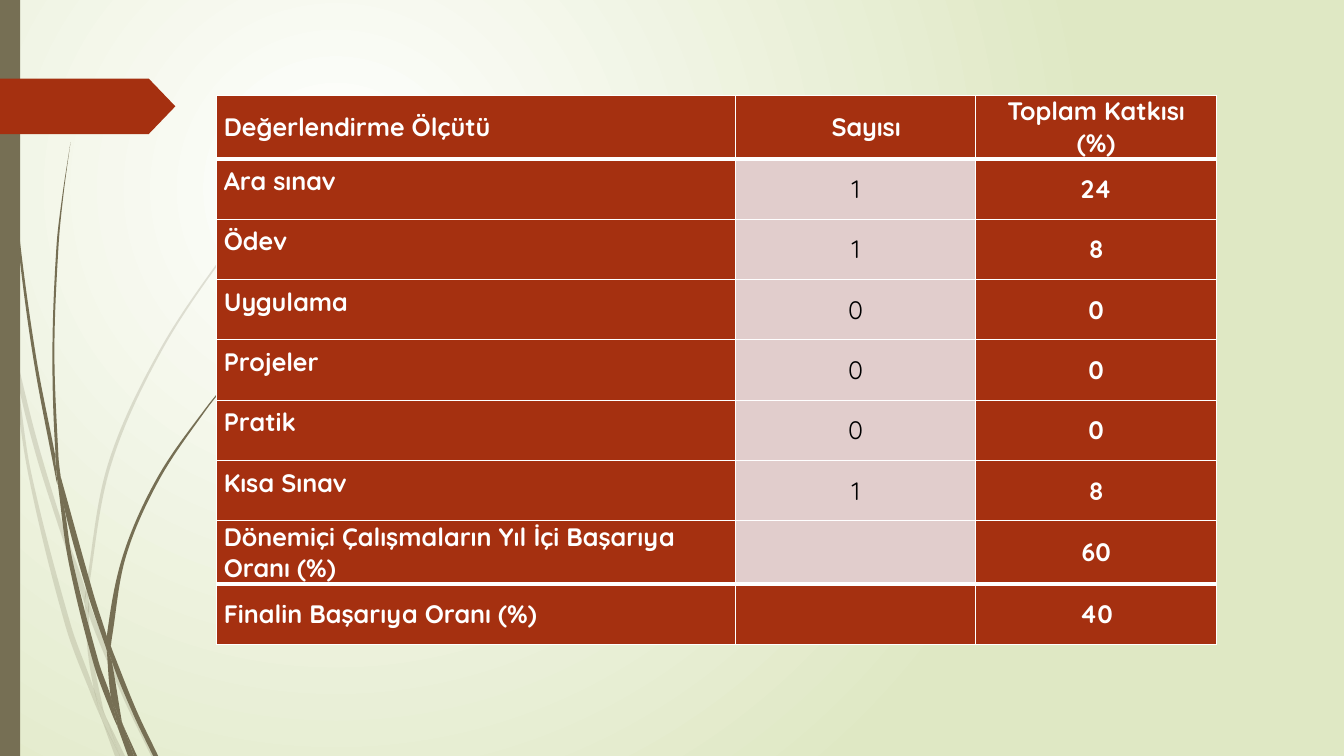
from dataclasses import dataclass
from math import hypot

from lxml import etree
from pptx import Presentation
from pptx.dml.color import RGBColor
from pptx.enum.shapes import MSO_SHAPE
from pptx.enum.text import MSO_ANCHOR, PP_ALIGN
from pptx.oxml import parse_xml
from pptx.oxml.ns import qn
from pptx.util import Cm, Pt

RECT, ARROW = MSO_SHAPE.RECTANGLE, MSO_SHAPE.PENTAGON
MIDDLE, LEFT, CENTER = MSO_ANCHOR.MIDDLE, PP_ALIGN.LEFT, PP_ALIGN.CENTER
SPACE = "http://schemas.openxmlformats.org/drawingml/2006/main"

ROWS = [
    ("Değerlendirme Ölçütü", "Sayısı", "Toplam Katkısı (%)"),
    ("Ara sınav", "1", "24"),
    ("Ödev", "1", "8"),
    ("Uygulama", "0", "0"),
    ("Projeler", "0", "0"),
    ("Pratik", "0", "0"),
    ("Kısa Sınav", "1", "8"),
    ("Dönemiçi Çalışmaların Yıl İçi Başarıya Oranı (%)", "", "60"),
    ("Finalin Başarıya Oranı (%)", "", "40"),
]
WIDTHS = (13.08, 6.05, 6.07)
HEAD_INDENTS = ((0.18, 0), (0.53, 0), (0.38, 0.38))
ROW_HEIGHT = 1.52
TIGHT = range(1, 7)

UNIT = 2.54
PALE_BLADES = [
    [(.11, 3.5), (.09, 3.22), (0, 2.82), (0, 2.99), (.1, 3.44)],
    [(.58, 5.22), (.84, 5.99), (.85, 5.86), (.62, 5.2), (.36, 4.34),
     (.14, 3.45), (.17, 3.76), (.35, 4.49)],
    [(.92, 6.07), (.88, 5.96), (.88, 6.1), (1.23, 6.94), (1.5, 7.5),
     (1.55, 7.5), (1.27, 6.92)],
    [(1.19, 7.5), (1.24, 7.5), (1.05, 7.11)],
    [(.93, 6.83), (.7, 6.19), (.31, 4.69), (.17, 3.76), (.11, 3.5),
     (.28, 4.7), (.65, 6.21), (.92, 6.93), (1.01, 7.14), (.99, 7.07)],
    [(.84, 5.99), (.87, 6.46), (.93, 6.83), (.96, 6.92), (1.05, 7.11),
     (1.03, 7.06), (.91, 6.46), (.88, 6.1), (.88, 6.08)],
    [(.88, 5.84), (1.1, 4.62), (1.6, 3.49), (2.29, 2.45), (2.68, 1.98),
     (2.9, 1.75), (3.12, 1.54), (3.12, 1.53), (2.89, 1.75), (2.68, 1.97),
     (2.28, 2.44), (1.58, 3.48), (1.07, 4.61), (.85, 5.84), (.85, 5.86),
     (.88, 5.96)],
    [(1.01, 7.14), (1.14, 7.5), (1.19, 7.5)],
    [(.88, 6.08), (.88, 6.1), (.88, 5.96), (.85, 5.86), (.84, 5.99)],
    [(.96, 6.92), (.93, 6.83), (.99, 7.07), (1.01, 7.14), (1.19, 7.5),
     (1.05, 7.11)],
]
DARK_BLADES = [
    [(.07, 1.1), (.17, 2.33), (.33, 3.55), (.56, 4.77), (.57, 4.81),
     (.55, 4.57), (.55, 4.53), (.36, 3.55), (.19, 2.32), (.08, 1.09),
     (.05, .48), (.04, 0), (.03, 0), (.04, .48)],
    [(.88, 5.92), (1.06, 6.45), (1.06, 6.33), (1.06, 6.31), (.93, 5.9),
     (.6, 4.72), (.64, 5.05)],
    [(1.13, 6.49), (1.1, 6.41), (1.11, 6.56), (1.32, 7.08), (1.52, 7.5),
     (1.57, 7.5), (1.36, 7.06)],
    [(1.1, 6.91), (.98, 6.57), (.72, 5.56), (.64, 5.05), (.57, 4.77),
     (.68, 5.57), (.93, 6.59), (1.11, 7.08), (1.17, 7.22), (1.16, 7.17)],
    [(.6, 4.72), (.58, 4.53), (.54, 3.49), (.58, 2.45), (.63, 1.93),
     (.7, 1.41), (.62, 1.93), (.56, 2.45), (.52, 3.49), (.55, 4.49)],
    [(1.33, 7.5), (1.36, 7.5), (1.22, 7.19)],
    [(.57, 4.77), (.64, 5.05), (.6, 4.72), (.55, 4.49), (.55, 4.53)],
    [(1.11, 6.33), (1.25, 5.52), (1.58, 4.76), (2.05, 4.06), (2.31, 3.74),
     (2.45, 3.59), (2.61, 3.44), (2.6, 3.44), (2.45, 3.58), (2.31, 3.73),
     (2.04, 4.05), (1.56, 4.74), (1.22, 5.51), (1.06, 6.31), (1.1, 6.41)],
    [(1.17, 7.22), (1.27, 7.5), (1.31, 7.5)],
    [(1.06, 6.45), (1.1, 6.91), (1.16, 7.06), (1.22, 7.19), (1.21, 7.16),
     (1.11, 6.56), (1.09, 6.51)],
    [(1.06, 6.45), (1.09, 6.51), (1.11, 6.56), (1.1, 6.41), (1.06, 6.31),
     (1.06, 6.33)],
    [(1.16, 7.06), (1.1, 6.91), (1.16, 7.17), (1.17, 7.22), (1.3, 7.5),
     (1.33, 7.5), (1.22, 7.19)],
]


@dataclass
class Theme:
    font: str = "Quicksand"
    size: int = 18
    tight: float = 11.2
    white: str = "FFFFFF"
    black: str = "000000"
    rust: str = "A53010"
    rose: str = "E1CDCC"
    olive: str = "766F54"
    lime: str = "DFE8C4"


THEME = Theme()


def paint(shape, color, alpha=100):
    shape.shadow.inherit = False
    shape.fill.solid()
    shape.fill.fore_color.rgb = RGBColor.from_string(color)
    shape.line.fill.background()
    if alpha < 100:
        tone = shape.fill._xPr.find(".//" + qn("a:srgbClr"))
        etree.SubElement(tone, qn("a:alpha"), val=str(alpha * 1000))


def heading(start, end):
    dx, dy = end[0] - start[0], end[1] - start[1]
    size = hypot(dx, dy) or 1
    return dx / size, dy / size, size


def handle(knot, far, beyond):
    ax, ay, reach = heading(knot, far)
    bx, by, _ = heading(beyond, knot)
    if ax * bx + ay * by > 0.8:
        ax, ay, _ = heading(beyond, far)
    return knot[0] + ax * reach / 3, knot[1] + ay * reach / 3


def bend(shape):
    trace = shape._element.find(".//" + qn("a:path"))
    knots = [(int(pt.get("x")), int(pt.get("y"))) for pt in trace.iter(qn("a:pt"))]
    for part in trace.findall(qn("a:lnTo")) + trace.findall(qn("a:close")):
        trace.remove(part)
    count = len(knots)
    for spot in range(count):
        prior, start, end, after = (knots[(spot + k) % count] for k in (-1, 0, 1, 2))
        curve = etree.SubElement(trace, qn("a:cubicBezTo"))
        for x, y in (handle(start, end, prior), handle(end, start, after), end):
            etree.SubElement(curve, qn("a:pt"), x=str(round(x)), y=str(round(y)))
    etree.SubElement(trace, qn("a:close"))


def add_blade(shapes, knots, alpha):
    points = [(Cm(x * UNIT), Cm(y * UNIT)) for x, y in knots]
    pen = shapes.build_freeform(*points[0])
    pen.add_line_segments(points[1:], close=True)
    blade = pen.convert_to_shape()
    bend(blade)
    paint(blade, THEME.olive, alpha)


def add_glow(slide):
    stops = "".join(
        f'<a:gs pos="{place}"><a:srgbClr val="{color}"/></a:gs>'
        for place, color in ((0, THEME.white), (100000, THEME.lime)))
    slide.background.fill.solid()
    solid = slide.background._cSld.find(".//" + qn("a:solidFill"))
    solid.getparent().replace(solid, parse_xml(
        f'<a:gradFill xmlns:a="{SPACE}" rotWithShape="1"><a:gsLst>{stops}</a:gsLst>'
        '<a:path path="circle"><a:fillToRect l="50000" t="50000" r="100000" '
        'b="100000"/></a:path></a:gradFill>'))


def add_edges(cell, top, bottom):
    props = cell._tc.get_or_add_tcPr()
    sides = (("lnL", 1), ("lnR", 1), ("lnT", top), ("lnB", bottom))
    for spot, (side, width) in enumerate(sides):
        props.insert(spot, parse_xml(
            f'<a:{side} xmlns:a="{SPACE}" w="{Pt(width)}"><a:solidFill>'
            f'<a:srgbClr val="{THEME.white}"/></a:solidFill></a:{side}>'))


def fill_cell(cell, text, row, col):
    last = len(ROWS) - 1
    rosy = col == 1 and 0 < row < last
    cell.fill.solid()
    cell.fill.fore_color.rgb = RGBColor.from_string(THEME.rose if rosy else THEME.rust)
    cell.vertical_anchor = MIDDLE
    cell.margin_left = cell.margin_right = cell.margin_top = cell.margin_bottom = 0
    add_edges(cell, 3 if row in (1, last) else 1, 3 if row in (0, last - 1) else 1)
    cell.text_frame.text = text
    para = cell.text_frame.paragraphs[0]
    para.alignment = CENTER if col else LEFT
    indents = HEAD_INDENTS[col] if row == 0 or col == 0 else (0, 0)
    for side, indent in zip(("marL", "marR"), indents):
        para._p.get_or_add_pPr().set(side, str(Cm(indent)))
    if col == 0 and row in TIGHT:
        para.line_spacing = Pt(THEME.tight)
    for run in para.runs:
        run.font.name = THEME.font
        run.font.size = Pt(THEME.size)
        run.font.bold = not rosy
        run.font.color.rgb = RGBColor.from_string(THEME.black if rosy else THEME.white)


def add_grades(shapes):
    frame = shapes.add_table(len(ROWS), len(WIDTHS), Cm(5.46), Cm(2.41),
                             Cm(sum(WIDTHS)), Cm(ROW_HEIGHT * len(ROWS)))
    table = frame.table
    table.first_row = table.horz_banding = False
    for col, width in enumerate(WIDTHS):
        table.columns[col].width = Cm(width)
    for row, texts in enumerate(ROWS):
        table.rows[row].height = Cm(ROW_HEIGHT)
        for col, text in enumerate(texts):
            fill_cell(table.cell(row, col), text, row, col)


def main():
    deck = Presentation()
    deck.slide_width, deck.slide_height = Cm(33.87), Cm(19.05)
    slide = deck.slides.add_slide(deck.slide_layouts[6])
    shapes = slide.shapes
    add_glow(slide)
    for blades, alpha in ((PALE_BLADES, 20), (DARK_BLADES, 100)):
        for knots in blades:
            add_blade(shapes, knots, alpha)
    paint(shapes.add_shape(RECT, 0, 0, Cm(0.51), deck.slide_height), THEME.olive)
    arrow = shapes.add_shape(ARROW, 0, Cm(1.98), Cm(4.42), Cm(1.4))
    arrow.adjustments[0] = 0.48
    paint(arrow, THEME.rust)
    add_grades(shapes)
    deck.save("out.pptx")


if __name__ == "__main__":
    main()
